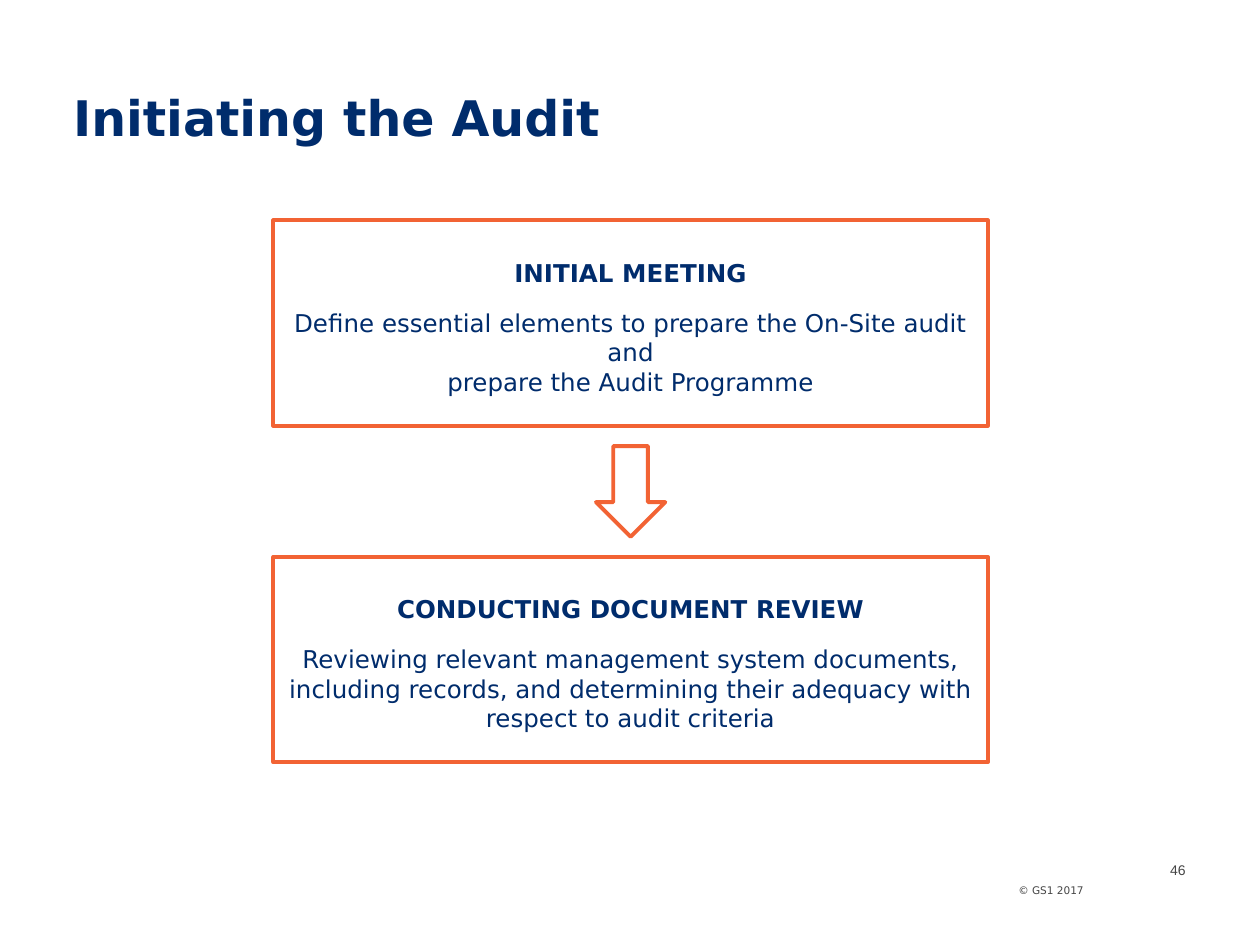
from dataclasses import dataclass

from pptx import Presentation
from pptx.dml.color import RGBColor
from pptx.enum.shapes import MSO_SHAPE
from pptx.enum.text import MSO_ANCHOR, PP_ALIGN
from pptx.util import Inches, Pt

RECT, ARROW = MSO_SHAPE.RECTANGLE, MSO_SHAPE.DOWN_ARROW
MIDDLE = MSO_ANCHOR.MIDDLE
LEFT, CENTER, RIGHT = PP_ALIGN.LEFT, PP_ALIGN.CENTER, PP_ALIGN.RIGHT


@dataclass(frozen=True)
class Theme:
    navy: RGBColor = RGBColor(0x00, 0x2C, 0x6C)
    orange: RGBColor = RGBColor(0xF2, 0x63, 0x34)
    white: RGBColor = RGBColor(0xFF, 0xFF, 0xFF)
    gray: RGBColor = RGBColor(0x45, 0x45, 0x45)
    font: str = "DejaVu Sans"
    plain: str = "Arial"
    title: float = 28
    body: float = 14
    page: float = 8
    legal: float = 6
    line: float = 2.25
    gap: float = 12


THEME = Theme()
STEPS = [
    ("INITIAL MEETING",
     ["Define essential elements to prepare the On-Site audit and",
      "prepare the Audit Programme"]),
    ("CONDUCTING DOCUMENT REVIEW",
     ["Reviewing relevant management system documents, including records, "
      "and determining their adequacy with respect to audit criteria"]),
]


def inset(frame, left, top, right, bottom):
    frame.word_wrap = True
    frame.vertical_anchor = MIDDLE
    frame.margin_left, frame.margin_top = Inches(left), Inches(top)
    frame.margin_right, frame.margin_bottom = Inches(right), Inches(bottom)


def style(para, size, color, align, bold=False, face=THEME.font):
    para.alignment = align
    for run in para.runs:
        font = run.font
        font.name, font.size, font.bold = face, Pt(size), bold
        font.color.rgb = color


def add_title(slide, text, box):
    title = slide.shapes.title
    title.left, title.top, title.width, title.height = map(Inches, box)
    frame = title.text_frame
    inset(frame, 0, 0.05, 0.1, 0.05)
    frame.text = text
    style(frame.paragraphs[0], THEME.title, THEME.navy, LEFT, True)


def add_note(slide, text, box, size, face):
    frame = slide.shapes.add_textbox(*map(Inches, box)).text_frame
    inset(frame, 0, 0, 0, 0)
    frame.text = text
    style(frame.paragraphs[0], size, THEME.gray, RIGHT, face=face)


def add_outline(slide, kind, box):
    shape = slide.shapes.add_shape(kind, *map(Inches, box))
    shape.shadow.inherit = False
    shape.fill.solid()
    shape.fill.fore_color.rgb = THEME.white
    shape.line.color.rgb = THEME.orange
    shape.line.width = Pt(THEME.line)
    return shape


def add_step(slide, head, lines, box):
    frame = add_outline(slide, RECT, box).text_frame
    inset(frame, 0.1, 0.11, 0.1, 0.05)
    frame.text = "\n".join([head, *lines])
    for i, para in enumerate(frame.paragraphs):
        style(para, THEME.body, THEME.navy, CENTER, i == 0)
    frame.paragraphs[0].space_after = Pt(THEME.gap)


def add_flow(slide, steps, box, high):
    """Stack the steps in the box, with an arrow centred in each gap."""
    left, top, width, height = box
    pitch = (height - high) / (len(steps) - 1)
    wide, tall = 0.55, 0.72
    for i, (head, lines) in enumerate(steps):
        y = top + i * pitch
        add_step(slide, head, lines, (left, y, width, high))
        if i:
            mid = y - (pitch - high) / 2
            add_outline(slide, ARROW, (left + (width - wide) / 2,
                                       mid - tall / 2, wide, tall))


def main():
    deck = Presentation()
    deck.slide_width, deck.slide_height = Inches(10), Inches(7.5)
    slide = deck.slides.add_slide(deck.slide_layouts[5])

    # Title
    add_title(slide, "Initiating the Audit", (0.58, 0.42, 8.92, 1.02))
    # Audit steps
    add_flow(slide, STEPS, (2.17, 1.75, 5.67, 4.3), 1.63)
    # Footer
    add_note(slide, "© GS1 2017", (6.08, 6.99, 2.52, 0.15),
             THEME.legal, THEME.font)
    add_note(slide, "46", (9.14, 6.79, 0.27, 0.22), THEME.page, THEME.plain)

    deck.save("out.pptx")


if __name__ == "__main__":
    main()
